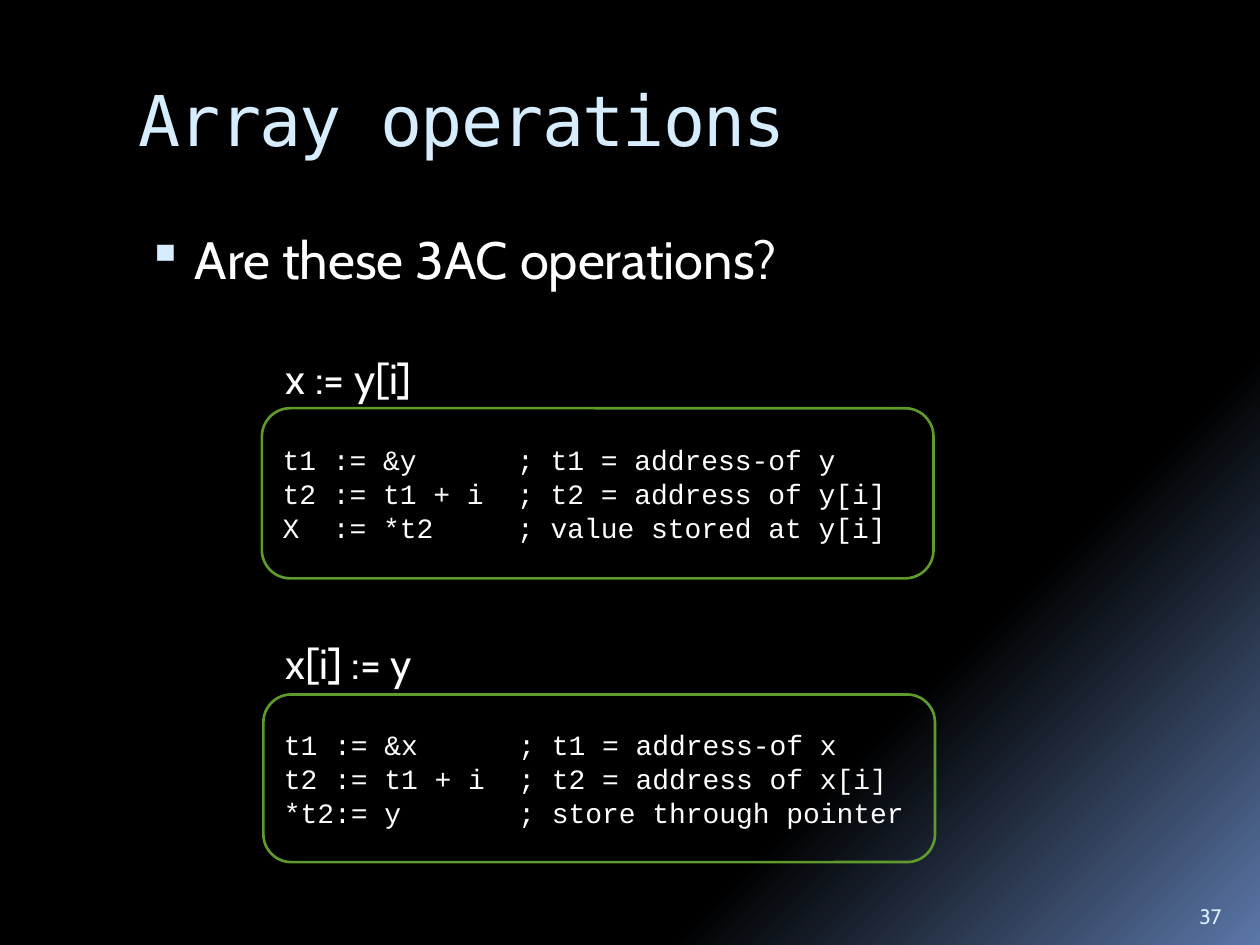
from lxml.etree import SubElement
from pptx import Presentation
from pptx.dml.color import RGBColor
from pptx.enum.shapes import MSO_SHAPE
from pptx.enum.text import MSO_ANCHOR, PP_ALIGN
from pptx.oxml.ns import qn
from pptx.util import Cm, Pt

COLORS = {"night": "000000", "glow": "5B77A8", "sky": "D6ECFF", "text": "FFFFFF", "frame": "5E9B2C"}


def color(name):
    return RGBColor.from_string(COLORS[name])


def write(frame, text, size, font="Cabin", ink="text", anchor=MSO_ANCHOR.TOP, wrap=True, spacing=None):
    frame.word_wrap = wrap
    frame.vertical_anchor = anchor
    for index, line in enumerate(text.split("\n")):
        paragraph = frame.paragraphs[0] if index == 0 else frame.add_paragraph()
        paragraph.alignment = PP_ALIGN.LEFT
        run = paragraph.add_run()
        run.text = line
        run.font.size = Pt(size)
        run.font.name = font
        run.font.color.rgb = color(ink)
        if spacing is not None:
            run.font._element.set("spc", str(spacing))


class Deck:
    """Holds the dark code-slide style and the current slide."""

    def __init__(self):
        self.presentation = Presentation()
        self.presentation.slide_width = Cm(25.4)
        self.presentation.slide_height = Cm(19.05)
        self.slide = None

    def new_slide(self):
        self.slide = self.presentation.slides.add_slide(self.presentation.slide_layouts[6])
        backdrop = self.slide.background.fill
        backdrop.gradient()
        backdrop.gradient_angle = 315
        for stop, position, name in zip(backdrop.gradient_stops, (0.73, 1), ("night", "glow")):
            stop.position = position
            stop.color.rgb = color(name)

    def text(self, words, left, top, width, height, **style):
        frame = self.slide.shapes.add_textbox(Cm(left), Cm(top), Cm(width), Cm(height)).text_frame
        write(frame, words, **style)
        return frame

    def bullet(self, words, left, top, width, height, **style):
        frame = self.text(words, left, top, width, height, **style)
        for paragraph in frame.paragraphs:
            properties = paragraph._p.get_or_add_pPr()
            properties.set("marL", str(Cm(1.14)))
            properties.set("indent", str(Cm(-0.97)))
            marker_color = SubElement(properties, qn("a:buClr"))
            SubElement(marker_color, qn("a:srgbClr"), val=COLORS["sky"])
            SubElement(properties, qn("a:buSzPct"), val="95000")
            SubElement(properties, qn("a:buChar"), char="▪")

    def code(self, listing, left, top, width, height):
        box = self.slide.shapes.add_shape(
            MSO_SHAPE.ROUNDED_RECTANGLE, Cm(left), Cm(top), Cm(width), Cm(height))
        box.shadow.inherit = False
        box.fill.background()
        box.line.color.rgb = color("frame")
        box.line.width = Pt(1.5)
        write(box.text_frame, listing, size=16, font="Courier New", anchor=MSO_ANCHOR.MIDDLE)

    def save(self):
        self.presentation.save("out.pptx")


def main():
    deck = Deck()
    deck.new_slide()
    deck.text("Array operations", 2.54, 1.42, 21.59, 2.54,
              size=40, font="DejaVu Sans Mono", ink="sky", spacing=-100)
    deck.bullet("Are these 3AC operations?", 2.54, 4.45, 21.59, 1.9, size=30)
    deck.text("37", 23.93, 17.83, 1.27, 1.02, size=12, ink="sky", anchor=MSO_ANCHOR.BOTTOM)

    array_read = """t1 := &y      ; t1 = address-of y
t2 := t1 + i  ; t2 = address of y[i]
X  := *t2     ; value stored at y[i]"""
    array_write = """t1 := &x      ; t1 = address-of x
t2 := t1 + i  ; t2 = address of x[i]
*t2:= y       ; store through pointer"""
    examples = [
        ("x := y[i]", 6.99, array_read, 5.28, 8.23, 3.43),
        ("x[i] := y", 12.73, array_write, 5.31, 14, 3.38),
    ]
    for statement, statement_top, listing, left, top, height in examples:
        deck.code(listing, left, top, 13.54, height)
        deck.text(statement, 5.51, statement_top, 3.05, 1.27, size=24, wrap=False)
    deck.save()


if __name__ == "__main__":
    main()
